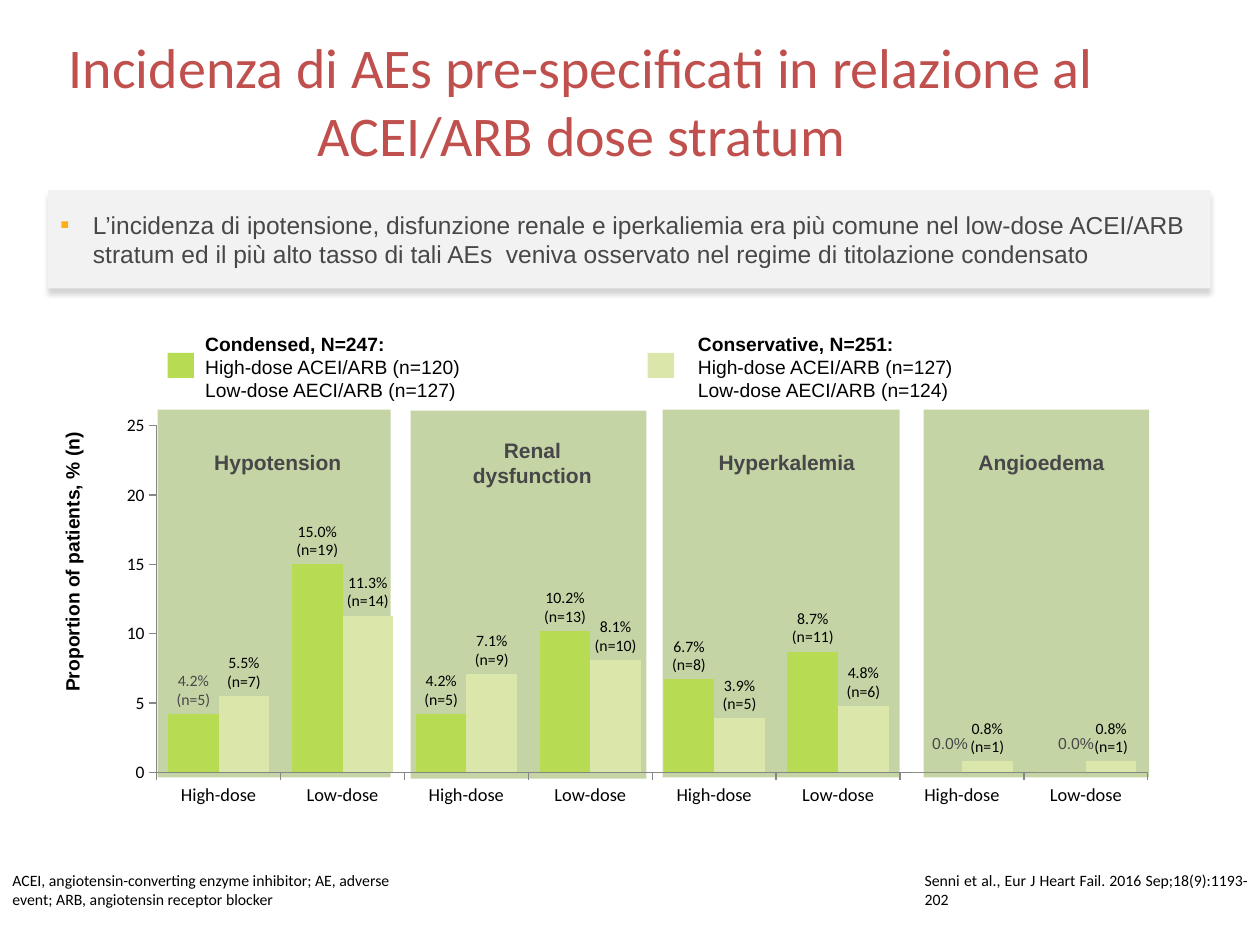
from typing import NamedTuple
from lxml.etree import SubElement
from pptx import Presentation
from pptx.chart.data import CategoryChartData
from pptx.dml.color import RGBColor
from pptx.enum.chart import XL_CHART_TYPE, XL_LABEL_POSITION, XL_TICK_MARK
from pptx.enum.shapes import MSO_SHAPE
from pptx.enum.text import MSO_ANCHOR, MSO_AUTO_SIZE, PP_ALIGN
from pptx.oxml import parse_xml
from pptx.oxml.ns import nsdecls, qn
from pptx.util import Pt

SCALE = 9144
BLACK, GREY, RED, LINE = "000000", "474749", "C0504D", "868686"
DARK, PALE, BAND = "B8DB54", "DBE6AA", "86A644"


class Box(NamedTuple):
    left: int
    top: int
    width: int
    height: int


class Note(NamedTuple):
    text: str
    box: Box
    size: float
    face: str = "Arial"
    hue: str = BLACK
    bold: bool = False
    align: PP_ALIGN = PP_ALIGN.LEFT
    anchor: MSO_ANCHOR = MSO_ANCHOR.TOP
    inset: bool = True


class Key(NamedTuple):
    text: str
    box: Box
    swatch: Box
    hue: str


class Group(NamedTuple):
    name: str
    hue: str
    rates: list[float]
    counts: list[int]


BANDS = [
    Box(125, 325, 185, 292), Box(326, 326, 187, 292),
    Box(526, 325, 188, 292), Box(733, 325, 179, 292),
]
HEADS = ["Hypotension", "Renal dysfunction", "Hyperkalemia", "Angioedema"]
KEYS = [
    Key("Condensed, N=247:\nHigh-dose ACEI/ARB (n=120)\nLow-dose AECI/ARB (n=127)",
        Box(153, 258, 359, 66), Box(133, 280, 21, 20), DARK),
    Key("Conservative, N=251:\nHigh-dose ACEI/ARB (n=127)\nLow-dose AECI/ARB (n=124)",
        Box(544, 258, 369, 66), Box(514, 280, 21, 20), PALE),
]
GROUPS = [
    Group("Series 1", DARK, [4.2, 15, 4.2, 10.2, 6.7, 8.7, 0, 0],
          [5, 19, 5, 13, 8, 11, 0, 0]),
    Group("Series 2", PALE, [5.5, 11.3, 7.1, 8.1, 3.9, 4.8, 0.8, 0.8],
          [7, 14, 9, 10, 5, 6, 1, 1]),
]


def tint(hue: str) -> RGBColor:
    return RGBColor.from_string(hue)


def place(box: Box) -> list[int]:
    return [n * SCALE for n in box]


def style(font, size: float, face: str, hue: str, bold: bool = False) -> None:
    font.size, font.name, font.bold = Pt(size), face, bold
    font.color.rgb = tint(hue)


def write(frame, note: Note) -> None:
    frame.text = note.text
    frame.word_wrap = True
    frame.auto_size = MSO_AUTO_SIZE.NONE
    frame.vertical_anchor = note.anchor
    if not note.inset:
        frame.margin_left = frame.margin_right = 0
        frame.margin_top = frame.margin_bottom = 0
    for para in frame.paragraphs:
        para.alignment = note.align
        for run in para.runs:
            style(run.font, note.size, note.face, note.hue, note.bold)


def add_note(shapes, note: Note):
    frame = shapes.add_textbox(*place(note.box)).text_frame
    write(frame, note)
    return frame


def add_rect(shapes, box: Box, hue: str):
    rect = shapes.add_shape(MSO_SHAPE.RECTANGLE, *place(box))
    rect.shadow.inherit = False
    rect.fill.solid()
    rect.fill.fore_color.rgb = tint(hue)
    rect.line.fill.background()
    return rect


def add_band(shapes, box: Box) -> None:
    rect = add_rect(shapes, box, BAND)
    shade = rect.fill._xPr.find(qn("a:solidFill"))[0]
    SubElement(shade, qn("a:alpha")).set("val", "48000")


def add_title(slide) -> None:
    title = slide.shapes.title
    box = Box(0, 40, 923, 79)
    title.left, title.top, title.width, title.height = place(box)
    text = "Incidenza di AEs pre-specificati in relazione al ACEI/ARB dose stratum"
    write(title.text_frame, Note(text, box, 32, "Calibri", RED,
                                 align=PP_ALIGN.CENTER, anchor=MSO_ANCHOR.MIDDLE))


def add_lead(shapes) -> None:
    box = Box(38, 151, 923, 78)
    rect = add_rect(shapes, box, "F2F2F2")
    cast = rect._element.spPr.find(qn("a:effectLst"))
    cast.append(parse_xml(
        f'<a:outerShdw {nsdecls("a")} blurRad="38100" dist="38100" dir="5400000" '
        'algn="t" rotWithShape="0"><a:srgbClr val="000000"><a:alpha val="16000"/>'
        '</a:srgbClr></a:outerShdw>'))
    text = ("L’incidenza di ipotensione, disfunzione renale e iperkaliemia era più "
            "comune nel low-dose ACEI/ARB stratum ed il più alto tasso di tali AEs  "
            "veniva osservato nel regime di titolazione condensato")
    frame = rect.text_frame
    write(frame, Note(text, box, 14, hue=GREY, anchor=MSO_ANCHOR.MIDDLE))
    frame.margin_top = frame.margin_bottom = 10 * SCALE
    para = frame.paragraphs[0]
    para.space_after = Pt(10)
    props = para._p.get_or_add_pPr()
    props.set("marL", str(26 * SCALE))
    props.set("indent", str(-26 * SCALE))
    hue = SubElement(props, qn("a:buClr"))
    SubElement(hue, qn("a:srgbClr")).set("val", "FCAF17")
    SubElement(props, qn("a:buSzPct")).set("val", "110000")
    SubElement(props, qn("a:buFont")).set("typeface", "Arial")
    SubElement(props, qn("a:buChar")).set("char", "▪")


def add_key(shapes, key: Key) -> None:
    add_rect(shapes, key.swatch, key.hue)
    frame = add_note(shapes, Note(key.text, key.box, 11, anchor=MSO_ANCHOR.MIDDLE))
    frame.paragraphs[0].runs[0].font.bold = True


def label(bars, group: Group) -> None:
    bars.data_labels.show_value = False
    for i, (rate, count) in enumerate(zip(group.rates, group.counts)):
        if not count:
            continue
        tag = bars.points[i].data_label
        tag.text_frame.text = f"{rate:.1f}%\n(n={count})"
        tag.position = XL_LABEL_POSITION.OUTSIDE_END
        hue = GREY if group is GROUPS[0] and i == 0 else BLACK
        for para in tag.text_frame.paragraphs:
            style(para.runs[0].font, 9, "Calibri", hue)


def add_bars(shapes) -> None:
    data = CategoryChartData()
    data.categories = ["High-dose", "Low-dose"] * 4
    for group in GROUPS:
        data.add_series(group.name, group.rates)
    chart = shapes.add_chart(XL_CHART_TYPE.COLUMN_CLUSTERED,
                             *place(Box(85, 310, 856, 341)), data).chart
    chart.has_title = chart.has_legend = False
    style(chart.font, 18, "Calibri", BLACK)
    plot = chart.plots[0]
    plot.gap_width, plot.overlap = 45, 0
    plot.vary_by_categories = False
    for bars, group in zip(plot.series, GROUPS):
        bars.format.fill.solid()
        bars.format.fill.fore_color.rgb = tint(group.hue)
        label(bars, group)
    for axis, size in ((chart.category_axis, 10.5), (chart.value_axis, 10)):
        axis.has_major_gridlines = False
        axis.major_tick_mark = XL_TICK_MARK.OUTSIDE
        axis.format.line.color.rgb = tint(LINE)
        style(axis.tick_labels.font, size, "Calibri", BLACK)
    scale = chart.value_axis
    scale.minimum_scale, scale.maximum_scale, scale.major_unit = 0, 25, 5
    area = chart._chartSpace.chart.plotArea
    for old in area.findall(qn("c:layout")):
        area.remove(old)
    parts = [("layoutTarget", "inner"), ("xMode", "edge"), ("yMode", "edge"),
             ("x", 0.046), ("y", 0.082), ("w", 0.919), ("h", 0.807)]
    body = "".join(f'<c:{tag} val="{val}"/>' for tag, val in parts)
    area.insert(0, parse_xml(f'<c:layout {nsdecls("c")}><c:manualLayout>{body}'
                             '</c:manualLayout></c:layout>'))


def main() -> None:
    deck = Presentation()
    deck.slide_width, deck.slide_height = 1000 * SCALE, 750 * SCALE
    slide = deck.slides.add_slide(deck.slide_layouts[5])
    shapes = slide.shapes
    for box in BANDS:
        add_band(shapes, box)
    add_title(slide)
    add_bars(shapes)
    add_note(shapes, Note(
        "ACEI, angiotensin-converting enzyme inhibitor; AE, adverse event; "
        "ARB, angiotensin receptor blocker", Box(0, 686, 348, 45), 9, "Calibri"))
    add_note(shapes, Note("Senni et al., Eur J Heart Fail. 2016 Sep;18(9):1193-202",
                          Box(724, 686, 276, 45), 9, "Calibri", align=PP_ALIGN.JUSTIFY))
    for i, head in enumerate(HEADS):
        add_note(shapes, Note(head, Box(148 + 202 * i, 354, 145, 26), 12, hue=GREY,
                              bold=True, align=PP_ALIGN.CENTER, anchor=MSO_ANCHOR.MIDDLE))
    side = add_note(shapes, Note("Proportion of patients, % (n)",
                                 Box(43, 342, 39, 217), 11, bold=True))
    side.word_wrap = False
    side._txBody.bodyPr.set("vert", "vert270")
    legend = shapes.add_group_shape().shapes
    for key in KEYS:
        add_key(legend, key)
    for left in (738, 838):
        add_note(shapes, Note("0.0%", Box(left, 582, 32, 15), 9, hue=GREY,
                              align=PP_ALIGN.CENTER, inset=False))
    add_lead(shapes)
    deck.save("out.pptx")


if __name__ == "__main__":
    main()
